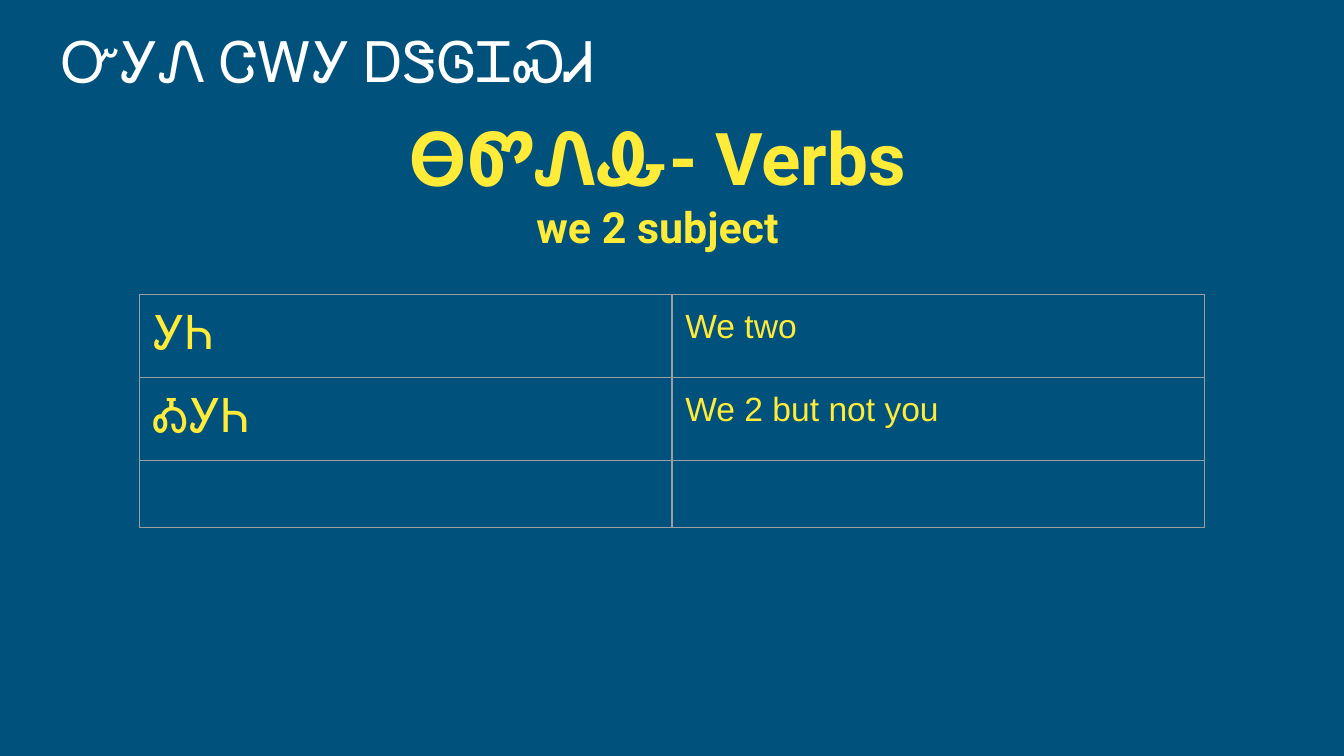
from typing import NamedTuple

from lxml import etree
from pptx import Presentation
from pptx.dml.color import RGBColor
from pptx.enum.text import MSO_ANCHOR, MSO_AUTO_SIZE, PP_ALIGN
from pptx.oxml.ns import qn
from pptx.util import Inches, Pt

LEFT, CENTER = PP_ALIGN.LEFT, PP_ALIGN.CENTER
TOP, BOTTOM = MSO_ANCHOR.TOP, MSO_ANCHOR.BOTTOM
NO_AUTOFIT = MSO_AUTO_SIZE.NONE
GROW = MSO_AUTO_SIZE.SHAPE_TO_FIT_TEXT

COLORS = {
    "background": "00517C",
    "title": "FFFFFF",
    "accent": "FFEB38",
    "border": "9E9E9E",
}
SLIDE_WIDTH = Inches(10)
SLIDE_HEIGHT = SLIDE_WIDTH * 9 // 16
INSET = Inches(0.1)
BORDER_WIDTH = Pt(0.75)
COLUMN_WIDTH = Inches(3.96)
ROW_HEIGHT = Inches(0.42)


class Line(NamedTuple):
    text: str
    size: float
    font: str
    color: str = "accent"
    bold: bool = False
    align: PP_ALIGN = LEFT


TITLE = Line("ᏅᎩᏁ ᏣᎳᎩ ᎠᏕᎶᏆᏍᏗ", 30, "Roboto Slab", "title")
HEADING = [
    Line("ᎾᏛᏁᎲ- Verbs", 39, "Roboto", bold=True, align=CENTER),
    Line("we 2 subject", 23, "Roboto", bold=True, align=CENTER),
]
PRONOUNS = [
    ("ᎩᏂ", "We two"),
    ("ᎣᎩᏂ", "We 2 but not you"),
    ("", ""),
]
PRONOUN_SIZES = (25, 18)


def write_lines(frame, lines: list[Line]) -> None:
    for index, line in enumerate(lines):
        paragraph = frame.paragraphs[0] if index == 0 else frame.add_paragraph()
        paragraph.alignment = line.align
        run = paragraph.add_run()
        run.text = line.text
        run.font.size = Pt(line.size)
        run.font.name = line.font
        run.font.bold = line.bold
        run.font.color.rgb = RGBColor.from_string(COLORS[line.color])


def set_insets(target) -> None:
    target.margin_left = target.margin_right = INSET
    target.margin_top = target.margin_bottom = INSET


def fill_frame(frame, lines: list[Line], anchor: MSO_ANCHOR,
               auto_size: MSO_AUTO_SIZE) -> None:
    set_insets(frame)
    frame.word_wrap = True
    frame.auto_size = auto_size
    frame.vertical_anchor = anchor
    write_lines(frame, lines)


def add_borders(cell) -> None:
    properties = cell._tc.get_or_add_tcPr()
    for side in ("lnL", "lnR", "lnT", "lnB"):
        border = etree.SubElement(properties, qn(f"a:{side}"), w=str(BORDER_WIDTH))
        fill = etree.SubElement(border, qn("a:solidFill"))
        etree.SubElement(fill, qn("a:srgbClr"), val=COLORS["border"])


def add_pronoun_table(slide) -> None:
    row_count, column_count = len(PRONOUNS), len(PRONOUN_SIZES)
    table = slide.shapes.add_table(
        row_count, column_count, Inches(1.04), Inches(2.19),
        COLUMN_WIDTH * column_count, ROW_HEIGHT * row_count).table
    table.first_row = False
    table.horz_banding = False
    for row, words in enumerate(PRONOUNS):
        for column, (word, size) in enumerate(zip(words, PRONOUN_SIZES)):
            cell = table.cell(row, column)
            set_insets(cell)
            add_borders(cell)
            cell.fill.background()
            if word:
                write_lines(cell.text_frame, [Line(word, size, "Arial")])


def main() -> None:
    deck = Presentation()
    deck.slide_width, deck.slide_height = SLIDE_WIDTH, SLIDE_HEIGHT
    slide = deck.slides.add_slide(deck.slide_layouts[5])
    background = slide.background.fill
    background.solid()
    background.fore_color.rgb = RGBColor.from_string(COLORS["background"])

    title = slide.shapes.title
    title.left, title.top = Inches(0.36), Inches(0.05)
    title.width, title.height = Inches(9.15), Inches(0.75)
    fill_frame(title.text_frame, [TITLE], BOTTOM, NO_AUTOFIT)

    heading = slide.shapes.add_textbox(
        Inches(2.51), Inches(0.74), Inches(4.77), Inches(1.25))
    fill_frame(heading.text_frame, HEADING, TOP, GROW)

    add_pronoun_table(slide)
    deck.save("out.pptx")


if __name__ == "__main__":
    main()
